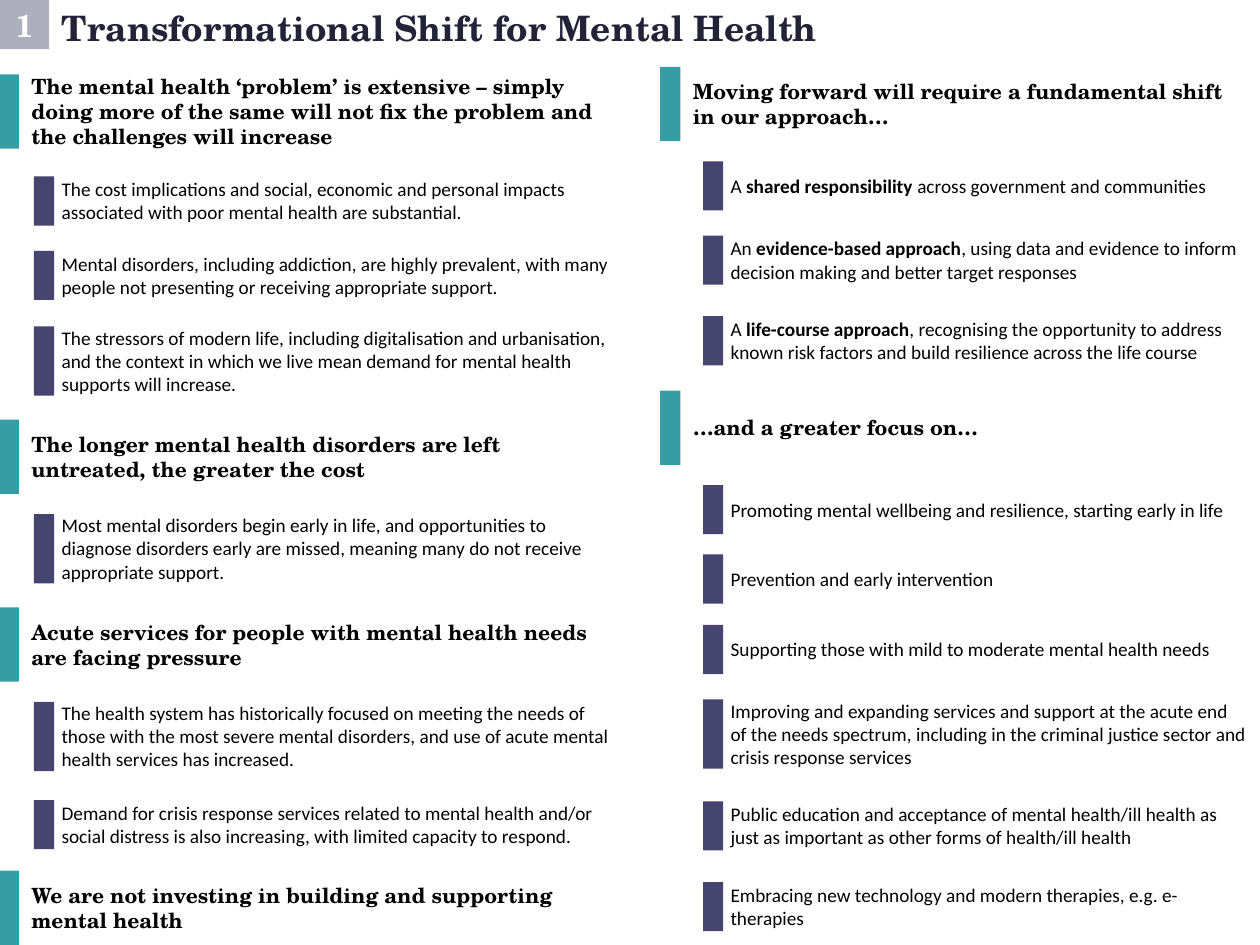
from dataclasses import dataclass

from pptx import Presentation
from pptx.dml.color import RGBColor
from pptx.enum import shapes, text
from pptx.util import Inches, Pt

NAVY = RGBColor(0x23, 0x23, 0x38)
GREY = RGBColor(0xAD, 0xB0, 0xBC)
TEAL = RGBColor(0x36, 0x9D, 0xA5)
PURPLE = RGBColor(0x45, 0x45, 0x6F)
BLACK = RGBColor(0, 0, 0)
WHITE = RGBColor(255, 255, 255)
SERIF, SANS = "TeX Gyre Schola", "Calibri"

# The slide is a grid of 100 columns by 75 rows
COLUMNS, ROWS = 100, 75
BAR_WIDTH = 1.6


@dataclass(frozen=True)
class Style:
    font: str
    size: int
    bold: bool
    color: RGBColor
    pitch: float = 2  # rows per line of text


@dataclass(frozen=True)
class Entry:
    style: Style
    bar_color: RGBColor
    text_offset: float  # columns from the bar to its text
    bar_rows: tuple  # bar height for one, two and three lines


TITLE = Style(SERIF, 20, True, NAVY)
NUMBER = Style(SERIF, 18, True, WHITE)
HEADING = Entry(Style(SERIF, 12, True, BLACK), TEAL, 1.6, (5.9, 5.9, 5.9))
POINT = Entry(Style(SANS, 11, False, BLACK, 1.85), PURPLE, 1.2, (3.9, 3.9, 5.5))

# Each column: left of bar and width of text per kind, then
# (kind, top row of bar, lines of text, wording with **bold** marks)
LEFT = {HEADING: (-0.1, 48.2), POINT: (2.7, 45.9)}
LEFT_ENTRIES = [
    (HEADING, 5.9, 3, "The mental health ‘problem’ is extensive – simply doing more of the "
     "same will not fix the problem and the challenges will increase"),
    (POINT, 14, 2, "The cost implications and social, economic and personal impacts "
     "associated with poor mental health are substantial."),
    (POINT, 19.9, 2, "Mental disorders, including addiction, are highly prevalent, with "
     "many people not presenting or receiving appropriate support."),
    (POINT, 25.9, 3, "The stressors of modern life, including digitalisation and "
     "urbanisation, and the context in which we live mean demand for mental health "
     "supports will increase."),
    (HEADING, 33.3, 2, "The longer mental health disorders are left untreated, the "
     "greater the cost"),
    (POINT, 40.8, 3, "Most mental disorders begin early in life, and opportunities to "
     "diagnose disorders early are missed, meaning many do not receive appropriate "
     "support."),
    (HEADING, 48.2, 2, "Acute services for people with mental health needs are facing "
     "pressure"),
    (POINT, 55.7, 3, "The health system has historically focused on meeting the needs of "
     "those with the most severe mental disorders, and use of acute mental health "
     "services has increased."),
    (POINT, 63.5, 2, "Demand for crisis response services related to mental health "
     "and/or social distress is also increasing, with limited capacity to respond."),
    (HEADING, 69.1, 2, "We are not investing in building and supporting mental health"),
]
RIGHT = {HEADING: (52.4, 45.3), POINT: (55.8, 43)}
RIGHT_ENTRIES = [
    (HEADING, 5.3, 2, "Moving forward will require a fundamental shift in our approach…"),
    (POINT, 12.8, 1, "A **shared responsibility **across government and communities"),
    (POINT, 18.7, 2, "An** evidence-based approach**, using data and evidence to inform "
     "decision making and better target responses"),
    (POINT, 25.1, 2, "A **life-course approach**, recognising the opportunity to address "
     "known risk factors and build resilience across the life course"),
    (HEADING, 31, 1, "…and a greater focus on…"),
    (POINT, 38.5, 1, "Promoting mental wellbeing and resilience, starting early in life"),
    (POINT, 44, 1, "Prevention and early intervention"),
    (POINT, 49.6, 1, "Supporting those with mild to moderate mental health needs"),
    (POINT, 55.5, 3, "Improving and expanding services and support at the acute end of "
     "the needs spectrum, including in the criminal justice sector and crisis response "
     "services"),
    (POINT, 63.6, 2, "Public education and acceptance of mental health/ill health as "
     "just as important as other forms of health/ill health"),
    (POINT, 70, 2, "Embracing new technology and modern therapies, e.g. e-therapies"),
]


class Board:
    def __init__(self):
        self.deck = Presentation()
        self.deck.slide_width, self.deck.slide_height = Inches(10), Inches(7.5)
        self.page = self.deck.slides.add_slide(self.deck.slide_layouts[5])

    def area(self, column, row, width, height):
        across = self.deck.slide_width / COLUMNS
        down = self.deck.slide_height / ROWS
        return (round(column * across), round(row * down),
                round(width * across), round(height * down))

    def set_wording(self, frame, wording, style, align=text.PP_ALIGN.LEFT):
        frame.word_wrap = True
        para = frame.paragraphs[0]
        para.alignment = align
        for index, part in enumerate(wording.split("**")):
            span = para.add_run()
            span.text = part
            span.font.name, span.font.size = style.font, Pt(style.size)
            span.font.bold = style.bold or index % 2 == 1
            span.font.color.rgb = style.color

    def title(self, wording, *place):
        box = self.page.shapes.title
        box.left, box.top, box.width, box.height = self.area(*place)
        box.text_frame.vertical_anchor = text.MSO_ANCHOR.TOP
        box.text_frame.auto_size = text.MSO_AUTO_SIZE.SHAPE_TO_FIT_TEXT
        self.set_wording(box.text_frame, wording, TITLE)

    def block(self, parent, color, *place):
        box = parent.add_shape(shapes.MSO_SHAPE.RECTANGLE, *self.area(*place))
        box.shadow.inherit = False
        box.fill.solid()
        box.fill.fore_color.rgb = color
        box.line.fill.background()
        return box

    def number(self, wording, *place):
        box = self.block(self.page.shapes, GREY, *place)
        box.text_frame.vertical_anchor = text.MSO_ANCHOR.MIDDLE
        self.set_wording(box.text_frame, wording, NUMBER, text.PP_ALIGN.CENTER)

    def entry(self, kind, column, width, row, lines, wording):
        """Group a bar with text centred on its height."""
        group = self.page.shapes.add_group_shape().shapes
        bar_height = kind.bar_rows[lines - 1]
        self.block(group, kind.bar_color, column, row, BAR_WIDTH, bar_height)
        height = 1 + lines * kind.style.pitch
        top = row + (bar_height - height) / 2
        box = group.add_textbox(
            *self.area(column + kind.text_offset, top, width, height))
        box.text_frame.auto_size = text.MSO_AUTO_SIZE.SHAPE_TO_FIT_TEXT
        self.set_wording(box.text_frame, wording, kind.style)

    def column(self, layout, entries):
        for kind, row, lines, wording in entries:
            self.entry(kind, *layout[kind], row, lines, wording)


def main():
    board = Board()
    # Title row
    board.title("Transformational Shift for Mental Health", 3.9, 0, 96.9, 4.4)
    board.number("1", 0, 0, 3.9, 3.9)
    # Problem on the left, response on the right
    board.column(LEFT, LEFT_ENTRIES)
    board.column(RIGHT, RIGHT_ENTRIES)
    board.deck.save("out.pptx")


if __name__ == "__main__":
    main()
